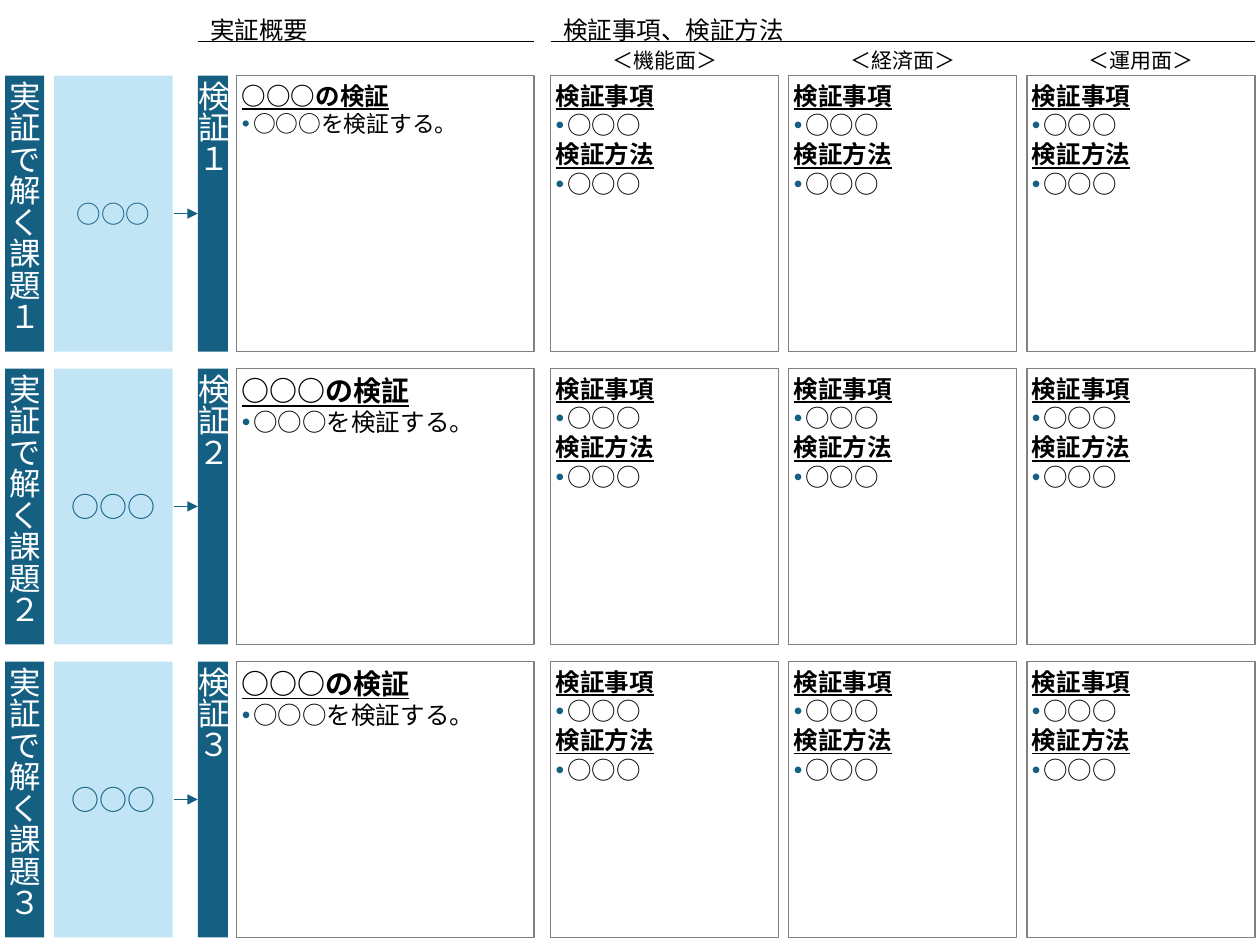
"""Build a slide that maps three issues to their verification items and methods."""
from lxml import etree
from pptx import Presentation, util as u
from pptx.dml import color
from pptx.enum import shapes, text
from pptx.oxml import ns

FONT = "Noto Sans CJK JP"
NAVY, SKY, GRAY, BLACK, WHITE = "156082", "C1E5F5", "808080", "000000", "FFFFFF"
I = u.Inches


def rgb(value):
    return color.RGBColor.from_string(value)


def box(x, y, w, h, paras, ink=BLACK, fill=None, line=None, center=True,
        vertical=False, label=False, inset=(0.04, 0.04), wrap=True):
    if label:
        sp = s.shapes.add_textbox(I(x), I(y), I(w), I(h))
    else:
        sp = s.shapes.add_shape(shapes.MSO_SHAPE.RECTANGLE, I(x), I(y), I(w), I(h))
        sp.shadow.inherit = False
    if fill:
        sp.fill.solid()
        sp.fill.fore_color.rgb = rgb(fill)
    else:
        sp.fill.background()
    if line:
        sp.line.color.rgb = rgb(line)
        sp.line.width = u.Pt(0.75)
    else:
        sp.line.fill.background()
    tf = sp.text_frame
    tf.word_wrap = wrap
    tf.margin_left = tf.margin_right = I(inset[0])
    tf.margin_top = tf.margin_bottom = I(inset[1])
    tf.vertical_anchor = text.MSO_ANCHOR.TOP if line else text.MSO_ANCHOR.MIDDLE
    if vertical:
        tf._txBody.bodyPr.set("vert", "eaVert")
    for i, (words, size, style) in enumerate(paras):
        p = tf.add_paragraph() if i else tf.paragraphs[0]
        p.alignment = text.PP_ALIGN.CENTER if center else text.PP_ALIGN.LEFT
        if style == "bullet":
            pPr = p._p.get_or_add_pPr()
            pPr.set("marL", str(I(0.09)))
            pPr.set("indent", str(I(-0.09)))
            clr = etree.SubElement(pPr, ns.qn("a:buClr"))
            etree.SubElement(clr, ns.qn("a:srgbClr"), val=NAVY)
            etree.SubElement(pPr, ns.qn("a:buFont"), typeface="Arial")
            etree.SubElement(pPr, ns.qn("a:buChar"), char="•")
        r = p.add_run()
        r.text = words
        r.font.size = u.Pt(size)
        r.font.name = FONT
        r.font.color.rgb = rgb(ink)
        r.font.bold = r.font.underline = style == "head"
        etree.SubElement(r._r.get_or_add_rPr(), ns.qn("a:ea"), typeface=FONT)


prs = Presentation()
prs.slide_width, prs.slide_height = I(10), I(7.5)
s = prs.slides.add_slide(prs.slide_layouts[6])

TOP, PITCH, HEIGHT = 0.6, 2.325, 2.19
COL_X, COL_PITCH, COL_W = 4.37, 1.89, 1.81
aspects = ["機能面", "経済面", "運用面"]
checks = [("検証事項", 14, "head"), ("○○○", 14, "bullet"),
          ("検証方法", 14, "head"), ("○○○", 14, "bullet")]
rows = [("１", 14, 13), ("２", 16, 14), ("３", 16, 14)]
lines = []

for x, w, heading in [(1.57, 2.67, "実証概要"), (COL_X, 5.59, "検証事項、検証方法")]:
    box(x, 0.13, w, 0.21, [(heading, 14, "")], center=False, label=True,
        inset=(0.1, 0.05), wrap=False)
    lines.append((x, x + w, 0.33, BLACK, False))

for col, aspect in enumerate(aspects):
    box(COL_X + col * COL_PITCH, 0.36, COL_W, 0.24, [(f"＜{aspect}＞", 12, "")], label=True)

for row, (number, head_size, body_size) in enumerate(rows):
    y = TOP + row * PITCH
    box(0.04, y, 0.31, HEIGHT, [("実証で解く課題" + number, 18, "")],
        ink=WHITE, fill=NAVY, vertical=True)
    box(0.43, y, 0.94, HEIGHT, [("○○○", head_size, "")], ink=NAVY, fill=SKY)
    box(1.57, y, 0.24, HEIGHT, [("検証" + number, 18, "")],
        ink=WHITE, fill=NAVY, vertical=True)
    box(1.88, y, 2.36, HEIGHT, [("○○○の検証", head_size, "head"),
                                ("○○○を検証する。", body_size, "bullet")],
        line=GRAY, center=False)
    for col in range(len(aspects)):
        box(COL_X + col * COL_PITCH, y, COL_W, HEIGHT, checks, line=GRAY, center=False)
    lines.append((1.38, 1.57, y + HEIGHT / 2, NAVY, True))

for x1, x2, y, ink, arrow in lines:
    c = s.shapes.add_connector(shapes.MSO_CONNECTOR.STRAIGHT, I(x1), I(y), I(x2), I(y))
    c.line.color.rgb = rgb(ink)
    c.line.width = u.Pt(1)
    if arrow:
        etree.SubElement(c.line._get_or_add_ln(), ns.qn("a:tailEnd"), type="triangle")
    etree.SubElement(c._element.spPr, ns.qn("a:effectLst"))

prs.save("out.pptx")
